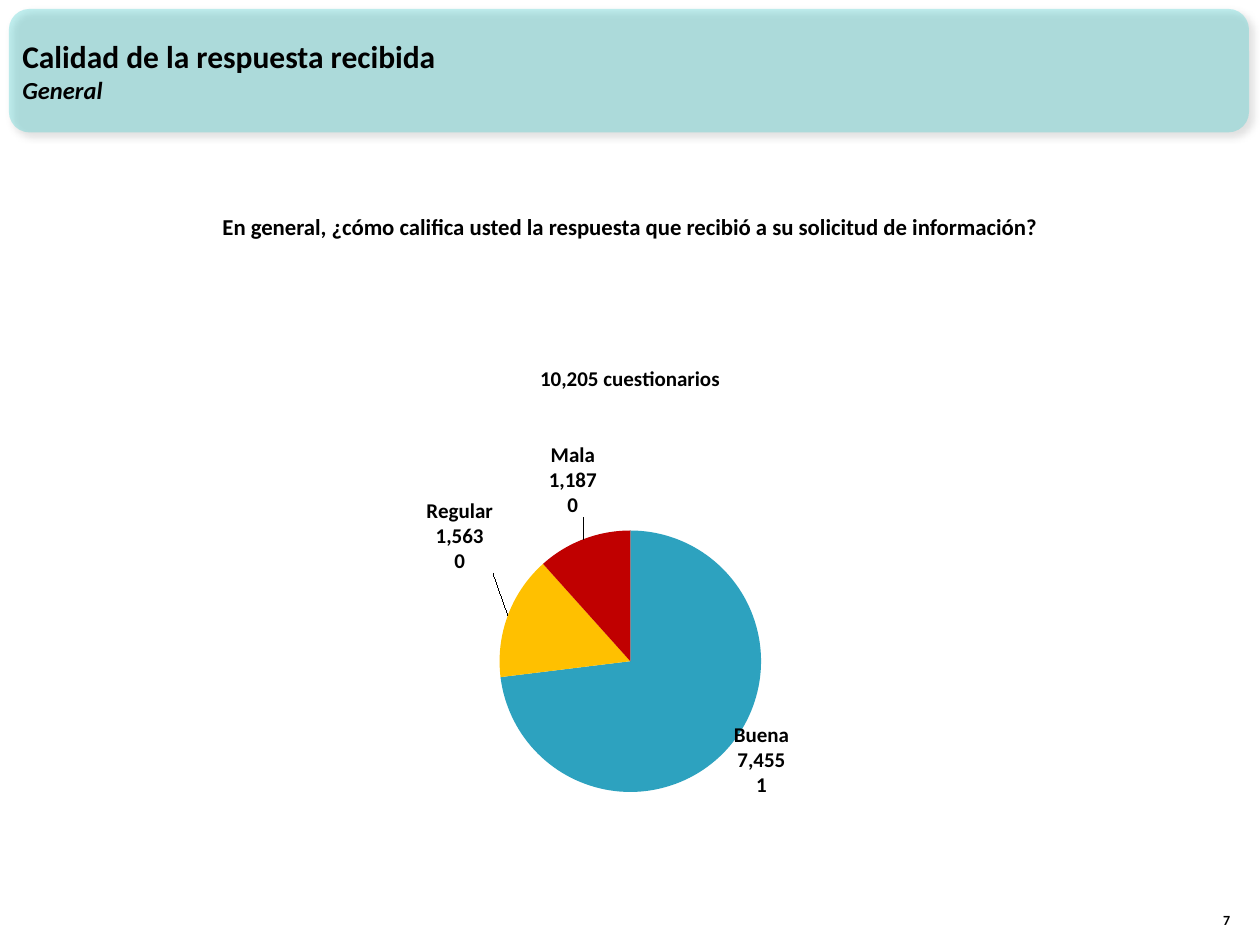
from lxml import etree
from pptx import Presentation
from pptx import util as u
from pptx.chart.data import CategoryChartData
from pptx.dml.color import RGBColor
from pptx.enum import chart as charts, shapes, text
from pptx.oxml import parse_xml
from pptx.oxml.ns import nsdecls, qn

COLORS = {"banner": "33CCCC", "ink": "000000",
          "Buena": "2DA2BF", "Regular": "FFC000", "Mala": "C00000"}
FONT = "Calibri"

HEADING = [("Calidad de la respuesta recibida", 18, False), ("General", 14, True)]
QUESTION = [("En general, ¿cómo califica usted la respuesta que recibió "
             "a su solicitud de información?", 13, False)]
PAGE = [("7", 8, False)]
CHART_TITLE = "10,205 cuestionarios"
# answer, count, label shift (x, y) as fractions of the chart
ANSWERS = [("Buena", 7455, (0, -0.06)),
           ("Regular", 1563, (-0.01, -0.08)),
           ("Mala", 1187, (0.02, -0.03))]
PLOT = {"x": 0.226, "y": 0.38, "w": 0.549, "h": 0.532}


def box(left, top, width, height):
    return [u.Cm(length) for length in (left, top, width, height)]


def style(font, size, italic=False):
    font.name, font.size, font.bold, font.italic = FONT, u.Pt(size), True, italic
    font.color.rgb = RGBColor.from_string(COLORS["ink"])


def add_text(slide, place, lines, align, anchor):
    frame = slide.shapes.add_textbox(*box(*place)).text_frame
    frame.word_wrap = True
    frame.vertical_anchor = anchor
    for number, (line, size, italic) in enumerate(lines):
        paragraph = frame.add_paragraph() if number else frame.paragraphs[0]
        paragraph.text = line
        paragraph.alignment = align
        style(paragraph.font, size, italic)


def add_banner(slide):
    banner = slide.shapes.add_shape(
        shapes.MSO_SHAPE.ROUNDED_RECTANGLE, *box(0.18, 0.18, 25, 2.49))
    banner.fill.solid()
    banner.fill.fore_color.rgb = RGBColor.from_string(COLORS["banner"])
    banner.line.fill.background()
    properties = banner._element.spPr
    tint = properties.find(qn("a:solidFill"))[0]
    etree.SubElement(tint, qn("a:alpha"), val="30000")
    properties.append(parse_xml(
        f'<a:effectLst {nsdecls("a")}><a:outerShdw blurRad="50800" dist="38100" '
        'dir="2700000" algn="tl" rotWithShape="0">'
        f'<a:srgbClr val="{COLORS["ink"]}"><a:alpha val="40000"/></a:srgbClr>'
        '</a:outerShdw></a:effectLst>'))


def manual_layout(settings):
    parts = "".join(f'<c:{tag} val="{value}"/>' for tag, value in settings.items())
    return parse_xml(f'<c:layout {nsdecls("c")}><c:manualLayout>{parts}'
                     '</c:manualLayout></c:layout>')


def add_pie(slide):
    data = CategoryChartData(number_format="#,##0")
    data.categories = [answer for answer, _, _ in ANSWERS]
    data.add_series(CHART_TITLE, [count for _, count, _ in ANSWERS])
    pie = slide.shapes.add_chart(
        charts.XL_CHART_TYPE.PIE, *box(4.7, 6.93, 16, 9.91), data).chart
    style(pie.font, 12)
    pie.has_legend = False
    pie.has_title = True
    heading = pie.chart_title.text_frame
    heading.text = CHART_TITLE
    style(heading.paragraphs[0].font, 12)
    for overlay in pie.chart_title._element.findall(qn("c:overlay")):
        overlay.set("val", "1")

    area = pie._chartSpace.chart.plotArea
    for layout in area.findall(qn("c:layout")):
        area.remove(layout)
    area.insert(0, manual_layout({"layoutTarget": "inner", "xMode": "edge",
                                  "yMode": "edge", **PLOT}))

    pie.plots[0].vary_by_categories = True
    series = pie.plots[0].series[0]
    labels = series.data_labels
    labels.show_value = labels.show_percentage = labels.show_category_name = True
    labels.number_format, labels.number_format_is_linked = "#,##0", False
    style(labels.font, 12)
    for index, (answer, _, _) in enumerate(ANSWERS):
        point = series.points[index]
        point.format.fill.solid()
        point.format.fill.fore_color.rgb = RGBColor.from_string(COLORS[answer])
        style(point.data_label.font, 12)
        point.data_label.position = charts.XL_LABEL_POSITION.OUTSIDE_END

    label_set = series._element.find(qn("c:dLbls"))
    for label, (_, _, (x, y)) in zip(label_set.findall(qn("c:dLbl")), ANSWERS):
        label.insert(1, manual_layout({"x": x, "y": y}))
        for tag in ("c:showVal", "c:showCatName", "c:showPercent"):
            label.find(qn(tag)).set("val", "1")
        separator = etree.SubElement(label, qn("c:separator"))
        separator.text = "\n"
    for leader in label_set.findall(qn("c:showLeaderLines")):
        label_set.remove(leader)
    etree.SubElement(label_set, qn("c:separator")).text = "\n"
    etree.SubElement(label_set, qn("c:showLeaderLines"), val="1")


def main():
    deck = Presentation()
    deck.slide_width, deck.slide_height = u.Cm(25.4), u.Cm(19.05)
    slide = deck.slides.add_slide(deck.slide_layouts[6])
    align, anchor = text.PP_ALIGN, text.MSO_ANCHOR
    add_banner(slide)
    add_text(slide, (24.03, 17.81, 1.02, 1.02), PAGE, align.RIGHT, anchor.BOTTOM)
    add_pie(slide)
    add_text(slide, (2.26, 4.17, 20.85, 0.81), QUESTION, align.CENTER, anchor.TOP)
    add_text(slide, (0.2, 0.23, 23.29, 2.39), HEADING, align.LEFT, anchor.MIDDLE)
    deck.save("out.pptx")


if __name__ == "__main__":
    main()
